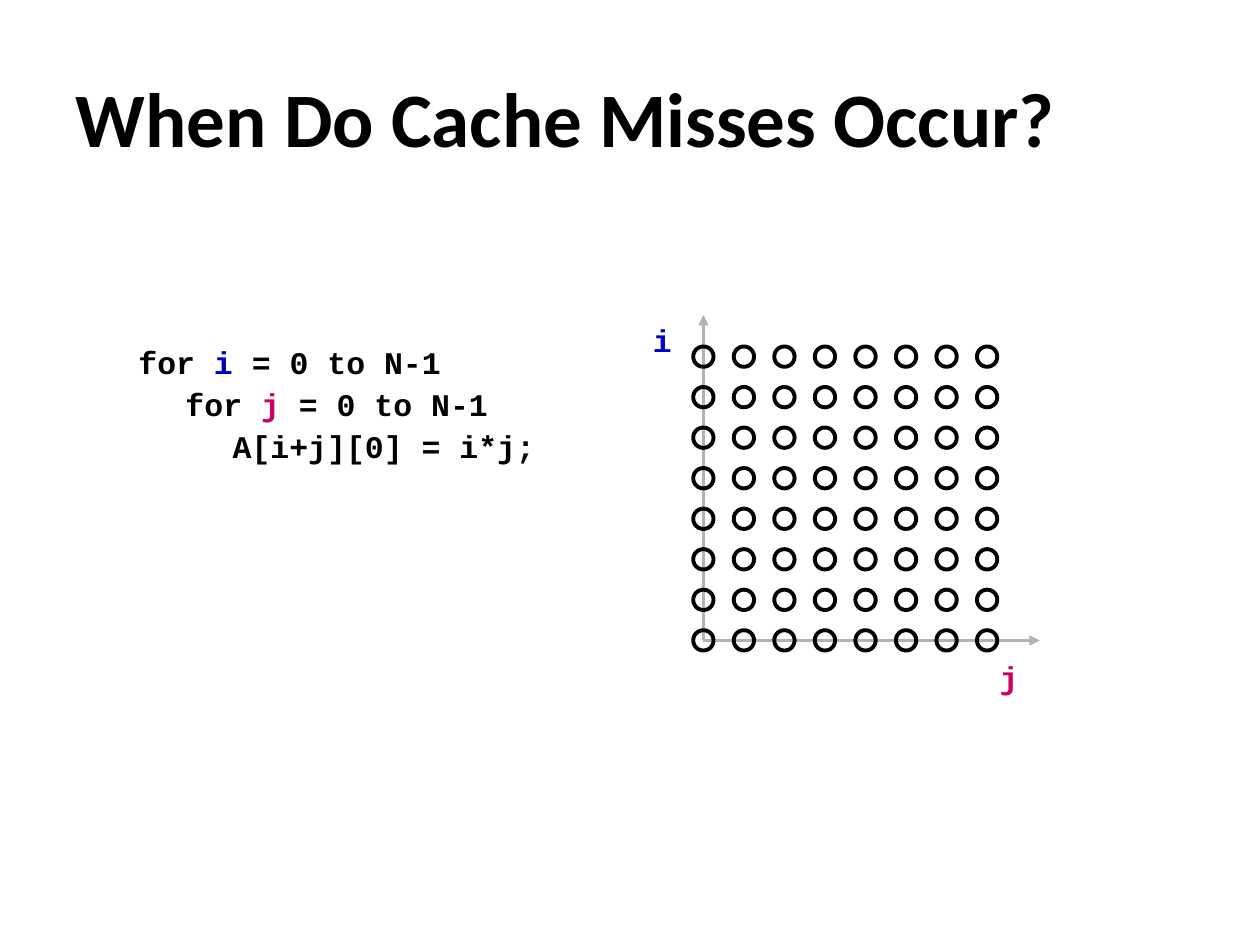
"""Builds a slide with a nested loop and its iteration space."""
import lxml.etree
import pptx
import pptx.dml.color
import pptx.enum.shapes
import pptx.enum.text
import pptx.oxml.ns
import pptx.util

Cm = pptx.util.Cm
Pt = pptx.util.Pt
qn = pptx.oxml.ns.qn

TITLE = "When Do Cache Misses Occur?"
COLOURS = {"text": "000000", "i": "0000CC", "j": "CC0066", "axis": "B2B2B2"}
CODE = [
    [("for ", "text"), ("i", "i"), (" = 0 to N-1", "text")],
    [("\tfor ", "text"), ("j", "j"), (" = 0 to N-1", "text")],
    [("\t\tA[i+j][0] = i*j;", "text")],
]
CODE_BOX = (2.54, 6.99, 9.32, 2.62)
LABELS = [("i", 12.91, 6.56), ("j", 19.9, 13.34)]
LABEL_SIZE = (0.81, 0.79)
TAB_STOPS = [0.95, 1.9]

ORIGIN = (14.18, 12.91)
AXIS_ENDS = [(14.18, 6.35), (20.96, 12.91)]
COUNT = 8
DOT = 0.41
GRID_SPAN = 5.72


def colour(name):
    return pptx.dml.color.RGBColor.from_string(COLOURS[name])


def style(span, face, size, name):
    span.font.name = face
    span.font.size = Pt(size)
    span.font.bold = True
    span.font.color.rgb = colour(name)


def set_spacing(para):
    para.line_spacing = 0.7
    properties = para._p.get_or_add_pPr()
    before = lxml.etree.SubElement(properties, qn("a:spcBef"))
    lxml.etree.SubElement(before, qn("a:spcPct"), val="50000")
    stops = lxml.etree.SubElement(properties, qn("a:tabLst"))
    for stop in TAB_STOPS:
        lxml.etree.SubElement(stops, qn("a:tab"), pos=str(int(Cm(stop))), algn="l")


def add_code(shapes, lines, left, top, width, height):
    box = shapes.add_textbox(Cm(left), Cm(top), Cm(width), Cm(height))
    frame = box.text_frame
    frame.word_wrap = True
    frame.auto_size = pptx.enum.text.MSO_AUTO_SIZE.SHAPE_TO_FIT_TEXT
    for index, line in enumerate(lines):
        para = frame.add_paragraph() if index else frame.paragraphs[0]
        set_spacing(para)
        for words, name in line:
            span = para.add_run()
            span.text = words
            style(span, "Courier New", 18, name)


def add_axis(shapes, end):
    axis = shapes.add_connector(
        pptx.enum.shapes.MSO_CONNECTOR.STRAIGHT, *map(Cm, ORIGIN + end)
    )
    axis.line.color.rgb = colour("axis")
    axis.line.width = Pt(1.5)
    lxml.etree.SubElement(axis.line._get_or_add_ln(), qn("a:tailEnd"), type="triangle")
    lxml.etree.SubElement(axis._element.spPr, qn("a:effectLst"))


def add_dot(shapes, column, row):
    pitch = GRID_SPAN / (COUNT - 1)
    left = ORIGIN[0] + column * pitch - DOT / 2
    top = ORIGIN[1] - row * pitch - DOT / 2
    dot = shapes.add_shape(
        pptx.enum.shapes.MSO_SHAPE.OVAL, Cm(left), Cm(top), Cm(DOT), Cm(DOT)
    )
    dot.shadow.inherit = False
    dot.fill.background()
    dot.line.color.rgb = colour("text")
    dot.line.width = Pt(2.25)


def add_title(page):
    title = page.shapes.title
    title.left, title.top, title.width, title.height = map(Cm, (1.27, 0.76, 22.86, 3.18))
    title.text_frame.text = TITLE
    title.text_frame.vertical_anchor = pptx.enum.text.MSO_ANCHOR.MIDDLE
    para = title.text_frame.paragraphs[0]
    para.alignment = pptx.enum.text.PP_ALIGN.LEFT
    style(para.runs[0], "Calibri", 44, "text")


def main():
    deck = pptx.Presentation()
    deck.slide_width, deck.slide_height = Cm(25.4), Cm(19.05)
    page = deck.slides.add_slide(deck.slide_layouts[5])
    add_title(page)
    add_code(page.shapes, CODE, *CODE_BOX)

    space = page.shapes.add_group_shape().shapes
    for end in AXIS_ENDS:
        add_axis(space, end)
    for name, left, top in LABELS:
        add_code(space, [[(name, name)]], left, top, *LABEL_SIZE)
    for row in range(COUNT):
        for column in range(COUNT):
            add_dot(space, column, row)
    deck.save("out.pptx")


if __name__ == "__main__":
    main()
